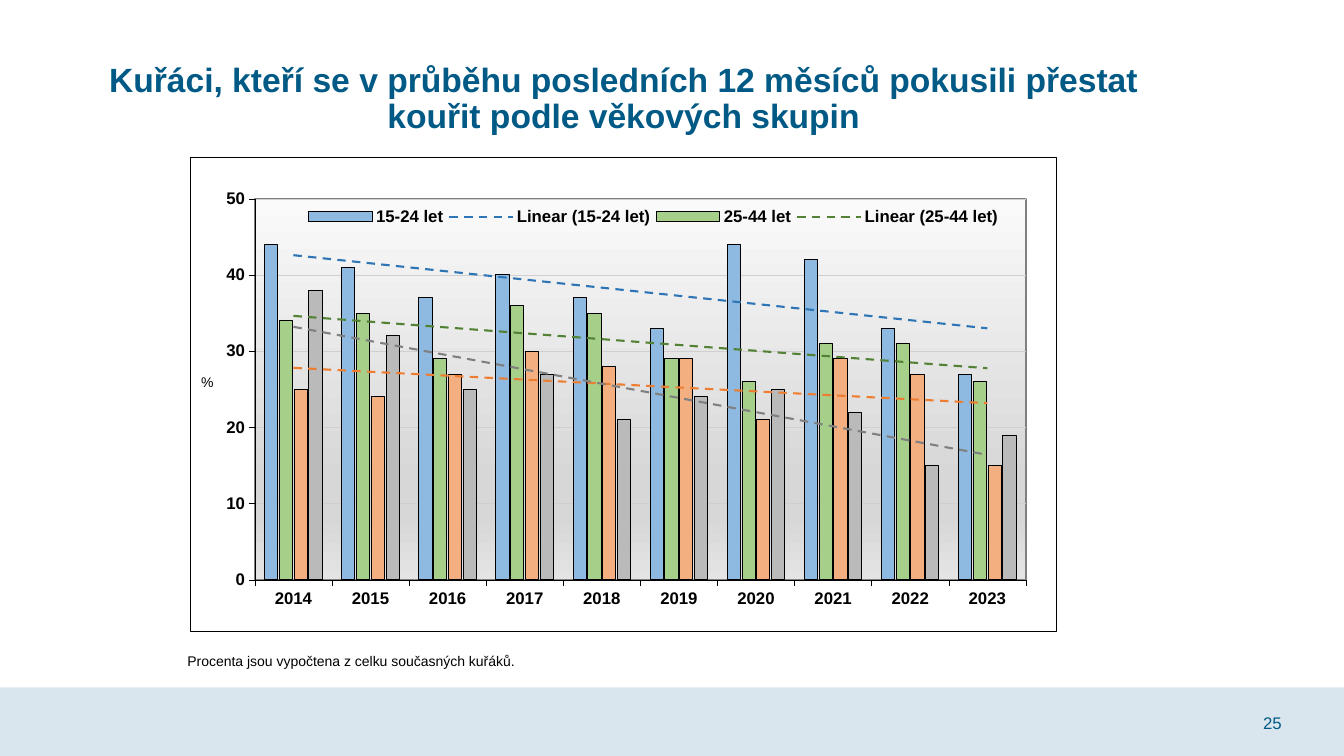
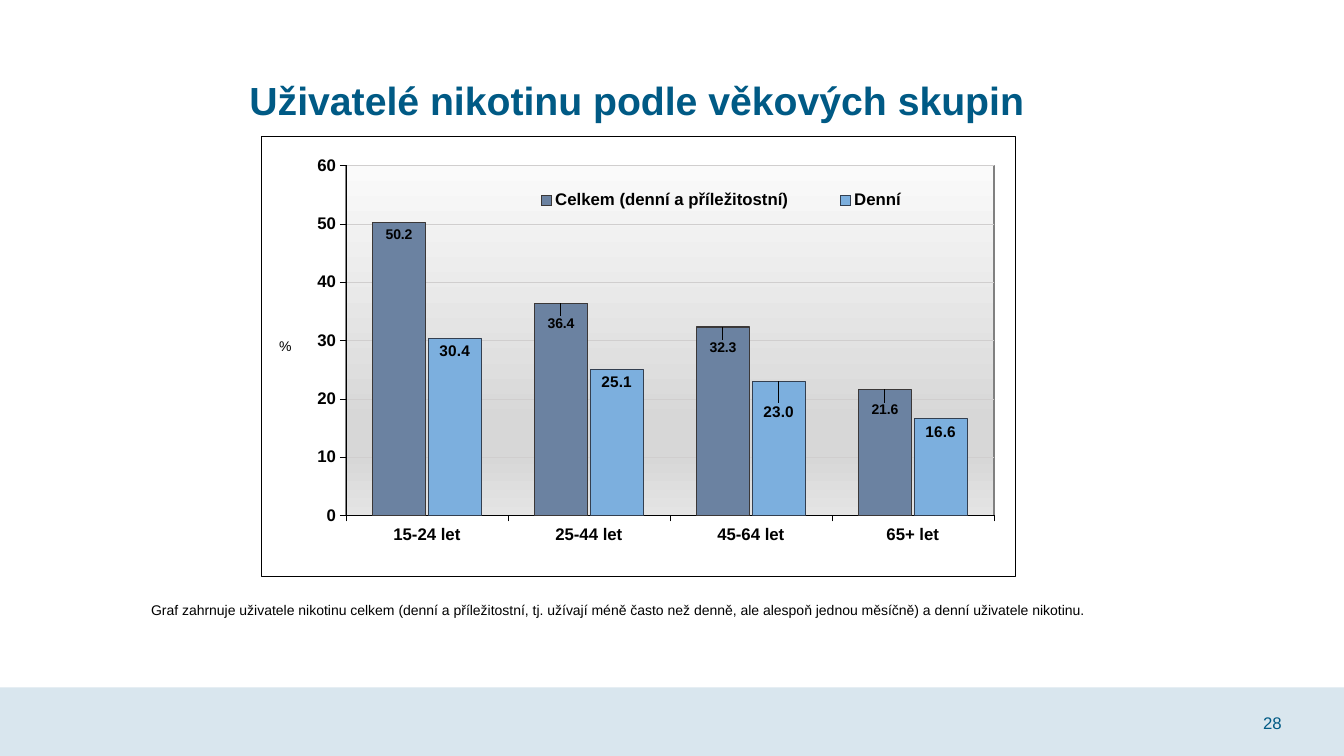
from dataclasses import dataclass

from lxml.etree import fromstring
from pptx import Presentation
from pptx.chart.data import CategoryChartData
from pptx.dml.color import RGBColor
from pptx.enum.chart import XL_CHART_TYPE, XL_LABEL_POSITION, XL_LEGEND_POSITION, XL_TICK_MARK
from pptx.enum.shapes import MSO_SHAPE
from pptx.enum.text import MSO_ANCHOR, PP_ALIGN
from pptx.oxml.ns import nsdecls, qn
from pptx.util import Inches, Pt


@dataclass(frozen=True)
class Theme:
    font: str = "Arial"
    accent: str = "005A85"
    band: str = "D9E6EE"
    paper: str = "FFFFFF"
    ink: str = "000000"
    grid: str = "D0CECE"
    plot_edge: str = "808080"
    plot_stops: tuple = ((0, "FAFAFA"), (74, "D7D7D7"), (83, "D7D7D7"), (100, "E4E4E4"))
    note_size: int = 10
    number_size: int = 12
    axis_size: int = 12


THEME = Theme()
SLIDE_WIDTH, SLIDE_HEIGHT = 13.33, 7.5
BAND_HEIGHT = 0.68


# Shared helpers

def set_values(target, values):
    for name, value in values.items():
        setattr(target, name, value)


def set_font(font, size, color=THEME.ink, bold=False):
    set_values(font, {"name": THEME.font, "size": Pt(size), "bold": bold})
    font.color.rgb = RGBColor.from_string(color)


def set_line(line, color, width):
    line.color.rgb = RGBColor.from_string(color)
    line.width = Pt(width)


def chart_xml(markup):
    """Parse a chart element, declaring its namespaces on the outer tag."""
    tag, rest = markup.split(">", 1)
    return fromstring(f"{tag} {nsdecls('c', 'a')}>{rest}")


def solid_xml(color):
    return f'<a:solidFill><a:srgbClr val="{color}"/></a:solidFill>'


def line_xml(color, width, dash="solid"):
    return f'<a:ln w="{Pt(width)}">{solid_xml(color)}<a:prstDash val="{dash}"/></a:ln>'


def set_layout(parent, position, index=0, inner=False, offset=False):
    """Place a chart part by fractions of the chart: x, y and maybe width, height."""
    target = '<c:layoutTarget val="inner"/>' if inner else ""
    modes = "" if offset else '<c:xMode val="edge"/><c:yMode val="edge"/>'
    numbers = "".join(f'<c:{name} val="{value}"/>' for name, value in zip("xywh", position))
    layout = chart_xml(f"<c:layout><c:manualLayout>{target}{modes}{numbers}</c:manualLayout></c:layout>")
    previous = parent.find(qn("c:layout"))
    if previous is not None:
        parent.remove(previous)
    overlay = parent.find(qn("c:overlay"))
    if overlay is not None:
        overlay.addprevious(layout)
    else:
        parent.insert(index, layout)


# Text and footer

def add_text(slide, box, text, size, color=THEME.ink, bold=False,
             anchor=MSO_ANCHOR.TOP, paragraph_format=None):
    shape = slide.shapes.add_textbox(*map(Inches, box))
    set_values(shape.text_frame, {"word_wrap": True, "vertical_anchor": anchor})
    paragraph = shape.text_frame.paragraphs[0]
    set_values(paragraph, paragraph_format or {})
    run = paragraph.add_run()
    run.text = text
    set_font(run.font, size, color, bold)


def add_footer(slide, box, number):
    left, top, width, height = box
    band = slide.shapes.add_shape(MSO_SHAPE.RECTANGLE, *map(Inches, box))
    band.shadow.inherit = False
    band.fill.solid()
    band.fill.fore_color.rgb = RGBColor.from_string(THEME.band)
    band.line.fill.background()
    add_text(slide, (left + width - 0.9, top + 0.15, 0.46, 0.4), str(number),
             THEME.number_size, THEME.accent, anchor=MSO_ANCHOR.MIDDLE)


# Chart parts

def style_axes(chart, maximum, title_position):
    for axis in (chart.category_axis, chart.value_axis):
        set_values(axis, {"major_tick_mark": XL_TICK_MARK.OUTSIDE,
                          "minor_tick_mark": XL_TICK_MARK.NONE})
        set_font(axis.tick_labels.font, THEME.axis_size, bold=True)
        set_line(axis.format.line, THEME.ink, 0.25)
    axis = chart.value_axis
    set_values(axis, {"minimum_scale": 0, "maximum_scale": maximum, "major_unit": 10,
                      "has_major_gridlines": True})
    set_values(axis.tick_labels, {"number_format": "0", "number_format_is_linked": False})
    set_line(axis.major_gridlines.format.line, THEME.grid, 0.25)
    frame = axis.axis_title.text_frame
    frame.text = "%"
    set_font(frame.paragraphs[0].runs[0].font, THEME.note_size)
    body = axis.axis_title._element.find(".//" + qn("a:bodyPr"))
    for name, value in {"rot": "0", "vert": "horz"}.items():
        body.set(name, value)
    set_layout(axis.axis_title._element, title_position)


def style_legend(chart, position, hidden):
    chart.has_legend = True
    legend = chart.legend
    set_values(legend, {"position": XL_LEGEND_POSITION.RIGHT, "include_in_layout": False})
    set_font(legend.font, THEME.axis_size, bold=True)
    set_layout(legend._element, position)
    position_element = legend._element.find(qn("c:legendPos"))
    for index in reversed(hidden):
        position_element.addnext(chart_xml(
            f'<c:legendEntry><c:idx val="{index}"/><c:delete val="1"/></c:legendEntry>'))


def style_areas(chart, plot_position):
    chart_space = chart._chartSpace
    frame = f"<c:spPr>{solid_xml(THEME.paper)}{line_xml(THEME.ink, 0.5)}</c:spPr>"
    chart_space.find(qn("c:chart")).addnext(chart_xml(frame))
    plot_area = chart_space.find(".//" + qn("c:plotArea"))
    set_layout(plot_area, plot_position, inner=True)
    stops = "".join(f'<a:gs pos="{place * 1000}"><a:srgbClr val="{color}"/></a:gs>'
                    for place, color in THEME.plot_stops)
    plot_area.append(chart_xml(
        f'<c:spPr><a:gradFill><a:gsLst>{stops}</a:gsLst><a:lin ang="5400000" scaled="0"/>'
        f"</a:gradFill>{line_xml(THEME.plot_edge, 1)}</c:spPr>"))


def add_trend(series, color):
    series._element.find(qn("c:cat")).addprevious(chart_xml(
        f'<c:trendline><c:spPr>{line_xml(color, 1.5, "dash")}</c:spPr>'
        '<c:trendlineType val="linear"/><c:dispRSqr val="0"/><c:dispEq val="0"/></c:trendline>'))


def add_labels(series, size, offsets):
    set_values(series.data_labels, {"show_value": True, "number_format": "0.0",
                                    "number_format_is_linked": False,
                                    "position": XL_LABEL_POSITION.INSIDE_END})
    set_font(series.data_labels.font, size, bold=True)
    for index, offset in offsets.items():
        label = series.points[index].data_label
        label.position = XL_LABEL_POSITION.INSIDE_END
        set_font(label.font, size, bold=True)
        element = next(item for item in series._element.iter(qn("c:dLbl"))
                       if item.find(qn("c:idx")).get("val") == str(index))
        set_layout(element, offset, index=1, offset=True)
        element.insert(2, chart_xml('<c:numFmt formatCode="0.0" sourceLinked="0"></c:numFmt>'))


def add_column_chart(slide, box, chart_spec):
    data = CategoryChartData(number_format=chart_spec["number_format"])
    data.categories = chart_spec["categories"]
    for entry in chart_spec["series"]:
        data.add_series(entry["name"], entry["values"])
    chart = slide.shapes.add_chart(
        XL_CHART_TYPE.COLUMN_CLUSTERED, *map(Inches, box), data).chart
    chart.has_title = False
    set_font(chart.font, chart_spec["size"])
    set_values(chart.plots[0], {"gap_width": chart_spec["gap"],
                                "overlap": chart_spec["overlap"], "vary_by_categories": False})
    for series, entry in zip(chart.plots[0].series, chart_spec["series"]):
        series.invert_if_negative = False
        series.format.fill.solid()
        series.format.fill.fore_color.rgb = RGBColor.from_string(entry["color"])
        set_line(series.format.line, entry["edge"], 0.75)
        if "trend" in entry:
            add_trend(series, entry["trend"])
        if "label_size" in entry:
            add_labels(series, entry["label_size"], entry["label_offsets"])
    style_axes(chart, chart_spec["maximum"], chart_spec["axis_title"])
    style_legend(chart, chart_spec["legend"], chart_spec["hidden_entries"])
    style_areas(chart, chart_spec["plot"])


# Slide content

def age_series(name, values, color, trend):
    return {"name": name, "values": values, "color": color, "edge": THEME.ink, "trend": trend}


QUIT_ATTEMPTS = {
    "number": 25,
    "title": "Kuřáci, kteří se v\u00a0průběhu posledních 12 měsíců pokusili přestat "
             "kouřit podle věkových skupin",
    "title_box": (0.92, 0.5, 10.53, 0.98),
    "title_size": 24,
    "chart_box": (1.88, 1.56, 8.6, 4.71),
    "note": "Procenta jsou vypočtena z celku současných kuřáků.",
    "note_box": (1.76, 6.42, 5.35, 0.57),
    "chart": {
        "categories": [str(year) for year in range(2014, 2024)],
        "number_format": "0", "size": 11, "gap": 149, "overlap": -12, "maximum": 50,
        "plot": (0.075, 0.087, 0.89, 0.804),
        "axis_title": (0.01, 0.45),
        "legend": (0.13, 0.1, 0.81, 0.05),
        "hidden_entries": range(4, 8),
        "series": [
            age_series("15-24 let", (44, 41, 37, 40, 37, 33, 44, 42, 33, 27), "8EBAE2", "2E75B6"),
            age_series("25-44 let", (34, 35, 29, 36, 35, 29, 26, 31, 31, 26), "A6D08A", "548235"),
            age_series("45-64 let", (25, 24, 27, 30, 28, 29, 21, 29, 27, 15), "F4AF80", "ED7D31"),
            age_series("65+ let", (38, 32, 25, 27, 21, 24, 25, 22, 15, 19), "BABABA", "808080"),
        ],
    },
}

NICOTINE_USERS = {
    "number": 28,
    "title": "Uživatelé nikotinu podle věkových skupin",
    "title_box": (0.57, 0.68, 11.49, 0.67),
    "title_size": 28,
    "chart_box": (2.59, 1.35, 7.48, 4.37),
    "note": "Graf zahrnuje uživatele nikotinu celkem (denní a příležitostní, tj. užívají méně "
            "často než denně, ale alespoň jednou měsíčně) a denní uživatele nikotinu.",
    "note_box": (1.4, 5.92, 10.14, 0.27),
    "chart": {
        "categories": ["15-24 let", "25-44 let", "45-64 let", "65+ let"],
        "number_format": "0.0", "size": 12, "gap": 100, "overlap": -5, "maximum": 60,
        "plot": (0.112, 0.066, 0.86, 0.796),
        "axis_title": (0.02, 0.45),
        "legend": (0.31, 0.1, 0.6, 0.09),
        "hidden_entries": (),
        "series": [
            {"name": "Celkem (denní a příležitostní)", "values": (50.2, 36.4, 32.3, 21.6),
             "color": "6B82A1", "edge": "3B3838", "label_size": 10,
             "label_offsets": {1: (0, 0.02), 2: (0, 0.02), 3: (0, 0.02)}},
            {"name": "Denní", "values": (30.4, 25.1, 23.0, 16.6),
             "color": "7CAFDE", "edge": "333F50", "label_size": 11,
             "label_offsets": {2: (0, 0.04)}},
        ],
    },
}


def build_chart_slide(presentation, content):
    slide = presentation.slides.add_slide(presentation.slide_layouts[6])
    add_footer(slide, (0, SLIDE_HEIGHT - BAND_HEIGHT, SLIDE_WIDTH, BAND_HEIGHT), content["number"])
    add_text(slide, content["title_box"], content["title"], content["title_size"], THEME.accent,
             True, MSO_ANCHOR.MIDDLE, {"alignment": PP_ALIGN.CENTER, "line_spacing": 0.9})
    add_column_chart(slide, content["chart_box"], content["chart"])
    add_text(slide, content["note_box"], content["note"], THEME.note_size)


def main():
    presentation = Presentation()
    set_values(presentation, {"slide_width": Inches(SLIDE_WIDTH),
                              "slide_height": Inches(SLIDE_HEIGHT)})
    for content in (QUIT_ATTEMPTS, NICOTINE_USERS):
        build_chart_slide(presentation, content)
    presentation.save("out.pptx")


if __name__ == "__main__":
    main()
